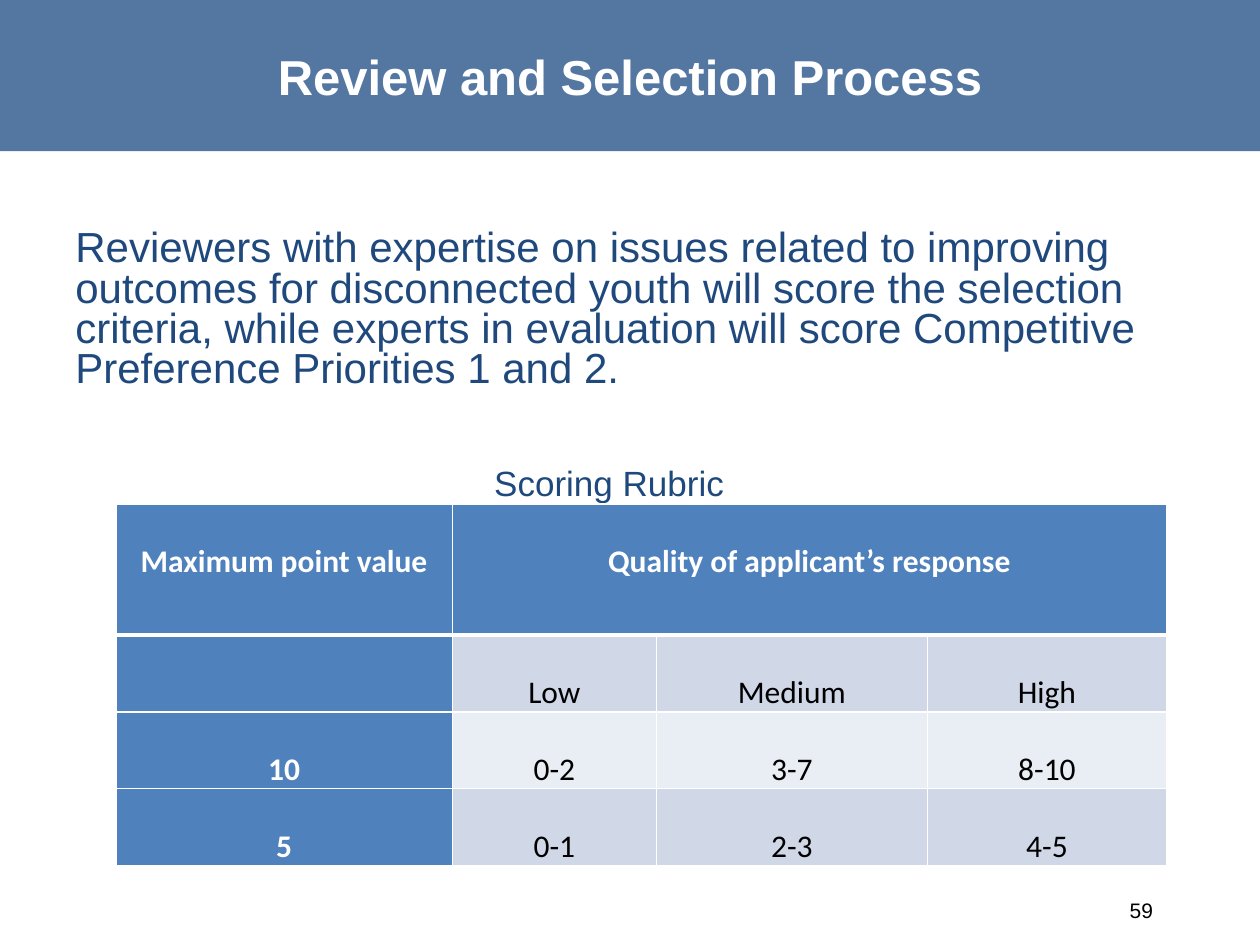
"""Build the review and selection process slide with its scoring rubric."""
from lxml import etree
from pptx import Presentation
from pptx import util as u
from pptx.dml.color import RGBColor
from pptx.enum import shapes, text
from pptx.oxml.ns import qn

COLORS = {"band": "376092", "navy": "1F497D", "white": "FFFFFF", "black": "000000",
          "header": "4F81BD", "odd": "D0D8E8", "even": "E9EDF4"}
CENTER, LEFT, RIGHT = text.PP_ALIGN.CENTER, text.PP_ALIGN.LEFT, text.PP_ALIGN.RIGHT
TOP, MIDDLE = text.MSO_ANCHOR.TOP, text.MSO_ANCHOR.MIDDLE

BODY = ("Reviewers with expertise on issues related to improving outcomes for "
        "disconnected youth will score the selection criteria, while experts in "
        "evaluation will score Competitive Preference Priorities 1 and 2.")
TEXTS = [
    ("Review and Selection Process", (0, 0, 10, 1.2), 28, "white", True, CENTER, MIDDLE, 1.0),
    (BODY, (0.5, 1.78, 8.67, 1.85), 24, "navy", False, LEFT, TOP, 0.8),
    ("Scoring Rubric", (0.5, 3.68, 8.67, 0.32), 20, "navy", False, CENTER, TOP, 0.8),
    ("59", (6.92, 7.02, 2.33, 0.4), 12, "black", False, RIGHT, MIDDLE, 1.0),
]
RUBRIC = [
    ["Maximum point value", "Quality of applicant’s response", "", ""],
    ["", "Low", "Medium", "High"],
    ["10", "0-2", "3-7", "8-10"],
    ["5", "0-1", "2-3", "4-5"],
]
COLUMN_WIDTHS = [2.67, 1.62, 2.15, 1.9]
ROW_HEIGHTS = [1.04, 0.61, 0.61, 0.61]


def color(name):
    return RGBColor.from_string(COLORS[name])


def add_run(paragraph, content, font, size, color_name, bold):
    run = paragraph.add_run()
    run.text = content
    run.font.name, run.font.size, run.font.bold = font, u.Pt(size), bold
    run.font.color.rgb = color(color_name)


def add_band(slide):
    band = slide.shapes.add_shape(shapes.MSO_SHAPE.RECTANGLE, 0, 0, u.Inches(10), u.Inches(1.2))
    band.shadow.inherit = False
    band.fill.solid()
    band.fill.fore_color.rgb = color("band")
    band.line.fill.background()
    fill_color = band.fill._xPr.find(qn("a:solidFill"))[0]
    etree.SubElement(fill_color, qn("a:alpha"), val="85000")


def add_text(slide, content, box, size, color_name, bold, align, anchor, spacing):
    frame = slide.shapes.add_textbox(*map(u.Inches, box)).text_frame
    frame.word_wrap = True
    frame.vertical_anchor = anchor
    paragraph = frame.paragraphs[0]
    paragraph.alignment, paragraph.line_spacing = align, spacing
    add_run(paragraph, content, "Arial", size, color_name, bold)


def add_borders(cell, widths):
    properties = cell._tc.get_or_add_tcPr()
    for side, width in widths.items():
        line = etree.SubElement(properties, qn(f"a:ln{side}"), w=str(u.Pt(width)))
        fill = etree.SubElement(line, qn("a:solidFill"))
        etree.SubElement(fill, qn("a:srgbClr"), val=COLORS["white"])


def add_rubric(slide):
    table = slide.shapes.add_table(
        len(RUBRIC), len(COLUMN_WIDTHS), u.Inches(0.92), u.Inches(4),
        u.Inches(sum(COLUMN_WIDTHS)), u.Inches(sum(ROW_HEIGHTS))).table
    table.horz_banding = False
    for column, width in zip(table.columns, COLUMN_WIDTHS):
        column.width = u.Inches(width)
    for row, height in zip(table.rows, ROW_HEIGHTS):
        row.height = u.Inches(height)
    for i, labels in enumerate(RUBRIC):
        for j, label in enumerate(labels):
            cell = table.cell(i, j)
            heading = i == 0 or j == 0
            add_borders(cell, {"L": 1, "R": 1, "T": 3 if i == 1 else 1, "B": 3 if i == 0 else 1})
            cell.fill.solid()
            cell.fill.fore_color.rgb = color("header" if heading else "odd" if i % 2 else "even")
            cell.margin_left = cell.margin_right = u.Inches(0.07)
            cell.margin_top = cell.margin_bottom = 0
            if label:
                paragraph = cell.text_frame.paragraphs[0]
                paragraph.alignment, paragraph.line_spacing = CENTER, 2.0
                add_run(paragraph, label, "Calibri", 18, "white" if heading else "black", heading)
    table.cell(0, 1).merge(table.cell(0, 3))


def main():
    presentation = Presentation()
    presentation.slide_width, presentation.slide_height = u.Inches(10), u.Inches(7.5)
    slide = presentation.slides.add_slide(presentation.slide_layouts[6])
    add_band(slide)
    for entry in TEXTS:
        add_text(slide, *entry)
    add_rubric(slide)
    presentation.save("out.pptx")


if __name__ == "__main__":
    main()
